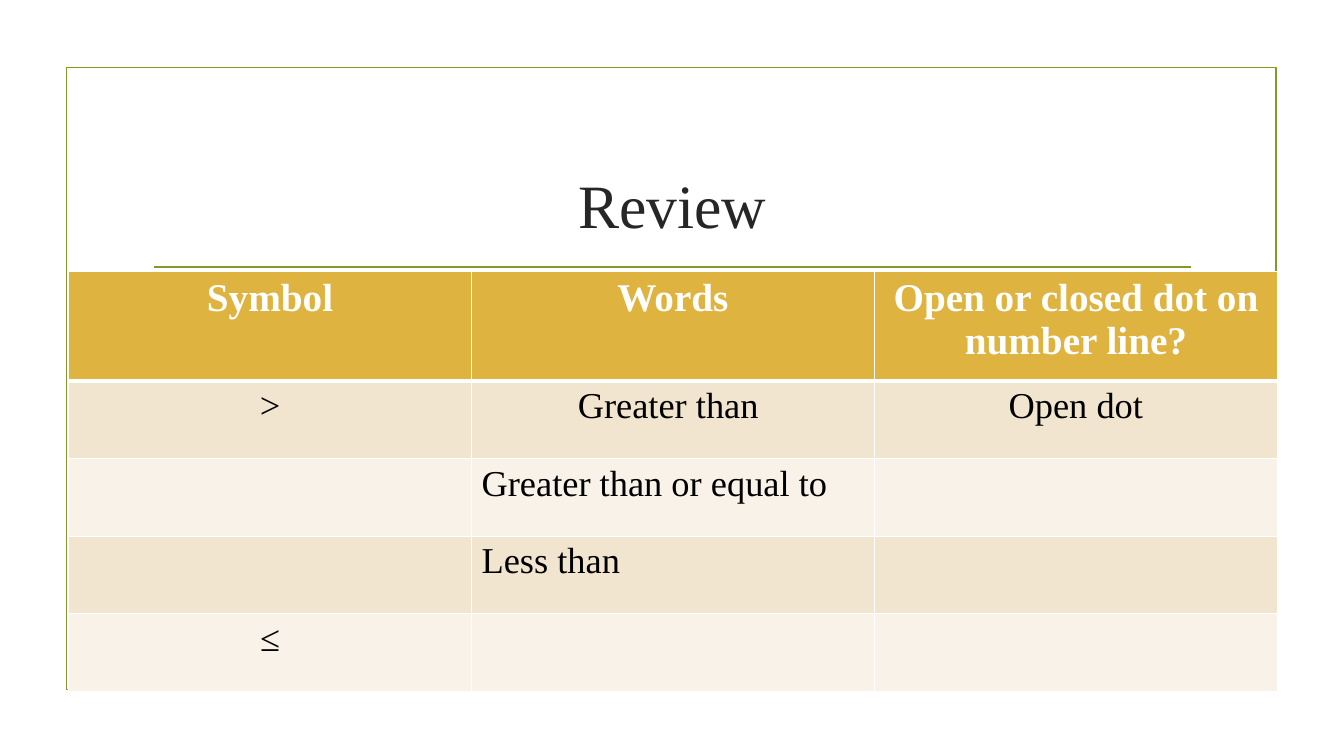
from lxml.etree import SubElement
from pptx import Presentation
from pptx.dml.color import RGBColor
from pptx.enum.shapes import MSO_CONNECTOR as Connector, MSO_SHAPE as Shape
from pptx.enum.text import MSO_ANCHOR as Anchor, PP_ALIGN as Align
from pptx.oxml.ns import qn
from pptx.util import Inches, Pt

TITLE = "Review"
ROWS = [
    ("Symbol", "Words", "Open or closed dot on number line?"),
    (">", "Greater than ", "Open dot"),
    ("", "Greater than or equal to", ""),
    ("", "Less than", ""),
    ("≤", "", ""),
]
LEFT_ALIGNED = {(2, 1), (3, 1)}
COLORS = {
    "green": "83992A",
    "title": "262626",
    "header": "DEB340",
    "odd": "F2E5CF",
    "even": "F9F2E8",
    "white": "FFFFFF",
    "black": "000000",
}
FONT = "Times New Roman"
TABLE_BOX = (0.68, 2.69, 11.99, 4.17)
HEADER_HEIGHT = 1.09


def color(name):
    return RGBColor.from_string(COLORS[name])


def write(frame, text, size, ink, bold=False, align=Align.CENTER):
    paragraph = frame.paragraphs[0]
    paragraph.text = text
    paragraph.alignment = align
    font = paragraph.font
    font.name, font.size, font.bold = FONT, Pt(size), bold
    font.color.rgb = color(ink)


def outline(shape):
    shape.line.color.rgb = color("green")
    shape.line.width = Pt(1.25)


def add_borders(cell, bottom):
    properties = cell._tc.get_or_add_tcPr()
    widths = {"a:lnL": 1, "a:lnR": 1, "a:lnT": 1, "a:lnB": bottom}
    for position, (tag, width) in enumerate(widths.items()):
        border = properties.makeelement(qn(tag), {"w": str(Pt(width))})
        fill = SubElement(border, qn("a:solidFill"))
        SubElement(fill, qn("a:srgbClr"), val=COLORS["white"])
        properties.insert(position, border)


def add_frame(slide):
    frame = slide.shapes.add_shape(
        Shape.RECTANGLE, Inches(0.66), Inches(0.67), Inches(12), Inches(6.17))
    frame.shadow.inherit = False
    frame.fill.background()
    outline(frame)
    rule = slide.shapes.add_connector(
        Connector.STRAIGHT, Inches(1.53), Inches(2.65), Inches(11.81), Inches(2.65))
    SubElement(rule._element.spPr, qn("a:effectLst"))
    outline(rule)


def add_title(slide):
    title = slide.shapes.title
    title.left, title.top = Inches(1.42), Inches(1.07)
    title.width, title.height = Inches(10.5), Inches(1.9)
    title.text_frame.vertical_anchor = Anchor.MIDDLE
    write(title.text_frame, TITLE, 44, "title")


def add_review_table(slide):
    left, top, width, height = map(Inches, TABLE_BOX)
    table = slide.shapes.add_table(
        len(ROWS), len(ROWS[0]), left, top, width, height).table
    header_height = Inches(HEADER_HEIGHT)
    for index, row in enumerate(ROWS):
        header = index == 0
        body_height = (height - header_height) // (len(ROWS) - 1)
        table.rows[index].height = header_height if header else body_height
        fill = "header" if header else "odd" if index % 2 else "even"
        for column, text in enumerate(row):
            cell = table.cell(index, column)
            cell.fill.solid()
            cell.fill.fore_color.rgb = color(fill)
            add_borders(cell, bottom=3 if header else 1)
            write(cell.text_frame, text, 28 if header else 26,
                  "white" if header else "black", bold=header,
                  align=Align.LEFT if (index, column) in LEFT_ALIGNED else Align.CENTER)


def main():
    presentation = Presentation()
    presentation.slide_width = Inches(13.33)
    presentation.slide_height = Inches(7.5)
    slide = presentation.slides.add_slide(presentation.slide_layouts[5])
    add_frame(slide)
    add_title(slide)
    add_review_table(slide)
    presentation.save("out.pptx")


if __name__ == "__main__":
    main()
